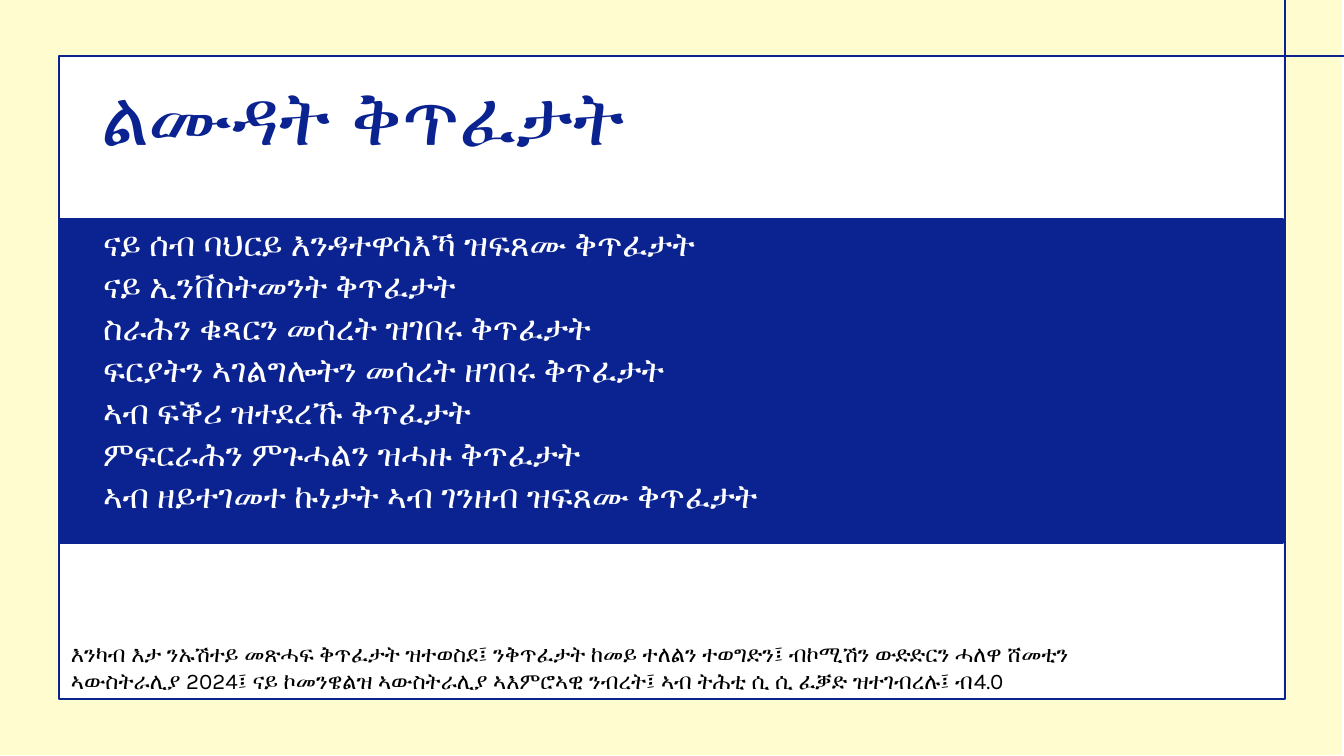
from lxml import etree
from pptx import Presentation
from pptx import util as u
from pptx.dml.color import RGBColor
from pptx.enum import shapes, text
from pptx.oxml.ns import qn

WIDE, HIGH = 1344, 756
SCALE = 12192000 / WIDE
FONT = "Karla"
HUES = {"navy": "0A2391", "cream": "FFFCCF", "white": "FFFFFF", "black": "000000"}
TITLE = "ልሙዳት ቅጥፈታት"
SCAMS = [
    ["ናይ ሰብ ባህርይ እንዳተዋሳእኻ ዝፍጸሙ ቅጥፈታት"],
    ["ናይ ኢንቨስትመንት ቅጥፈታት"],
    ["ስራሕን ቁጻርን መሰረት ዝገበሩ ቅጥፈታት"],
    ["ፍርያትን ኣገልግሎትን መሰረት ዘገበሩ ቅጥፈታት"],
    ["ኣብ ፍ", "ቕሪ ዝተደረኹ ቅጥፈታት"],
    ["ምፍርራሕን ምጉሓልን ዝሓዙ ቅጥፈታት"],
    ["ኣብ ዘይተገመተ ኩነታት ኣብ ገንዘብ ዝፍጸሙ ቅጥፈታት"],
]
SOURCE = (
    "እንካብ እታ ንኡሽተይ መጽሓፍ ቅጥፈታት ዝተወስደ፤ ንቅጥፈታት ከመይ ተለልን ተወግድን፤ "
    "ብኮሚሽን ውድድርን ሓለዋ ሸመቲን ኣውስትራሊያ 2024፤ ናይ ኮመንዌልዝ ኣውስትራሊያ "
    "ኣእምሮኣዊ ንብረት፤ ኣብ ትሕቲ ሲ ሲ ፈቓድ ዝተገብረሉ፤ ብ4.0"
)


def px(n):
    """Turn px into EMU."""
    return u.Emu(round(n * SCALE))


def hue(name):
    """Look up a colour by name."""
    return RGBColor.from_string(HUES[name])


def place(shape, box):
    """Move a shape to a box of left, top, width and height."""
    shape.left, shape.top, shape.width, shape.height = map(px, box)


def style(para, size, color, bold=False):
    """Set the font of a paragraph."""
    font = para.font
    font.name, font.size, font.bold = FONT, u.Pt(size), bold
    font.color.rgb = hue(color)


def frame(shape):
    """Prepare a text frame that wraps and starts at the top."""
    tf = shape.text_frame
    tf.word_wrap = True
    tf.auto_size = text.MSO_AUTO_SIZE.NONE
    tf.vertical_anchor = text.MSO_ANCHOR.TOP
    return tf


def rect(slide, box, fill=None, line=None):
    """Draw a plain rectangle."""
    shape = slide.shapes.add_shape(shapes.MSO_SHAPE.RECTANGLE, *map(px, box))
    shape.shadow.inherit = False
    if fill:
        shape.fill.solid()
        shape.fill.fore_color.rgb = hue(fill)
    else:
        shape.fill.background()
    if line:
        shape.line.color.rgb = hue(line)
        shape.line.width = u.Pt(1.5)
    else:
        shape.line.fill.background()


def head(slide, box):
    """Fill the title placeholder."""
    title = slide.shapes.title
    place(title, box)
    para = frame(title).paragraphs[0]
    para.text = TITLE
    para.alignment = text.PP_ALIGN.LEFT
    para.line_spacing = 0.9
    style(para, 54, "navy", True)


def note(slide, box):
    """Write the source note."""
    tf = frame(slide.shapes.add_textbox(*map(px, box)))
    tf.auto_size = text.MSO_AUTO_SIZE.SHAPE_TO_FIT_TEXT
    tf.text = SOURCE
    style(tf.paragraphs[0], 16, "black")


def border(slide, box):
    """Draw the cream margins, the frame and the corner lines around a box."""
    x, y, w, h = box
    side, shift = 59, -2
    for top in (0, y + h):
        rect(slide, (shift, top, WIDE, y), "cream")
    for left in (shift, x + w + shift):
        rect(slide, (left, y, side, h), "cream")
    rect(slide, (x + w, y - 70, 72, 70), line="navy")
    rect(slide, box, line="navy")


def panel(slide, box):
    """Draw the navy band and set the list of scams on it."""
    x, y, w, h = box
    rect(slide, box, "navy", "navy")
    body = slide.placeholders[1]
    slide.shapes._spTree.append(body._element)
    place(body, (x + 34, y + 10, w - 65, h - 29))
    tf = frame(body)
    for i, parts in enumerate(SCAMS):
        para = tf.add_paragraph() if i else tf.paragraphs[0]
        props = para._p.get_or_add_pPr()
        props.set("marL", "0")
        props.set("indent", "0")
        etree.SubElement(props, qn("a:buNone"))
        para.line_spacing = 0.7
        para.space_before = u.Pt(10 if i else 0)
        style(para, 23.8, "white")
        for part in parts:
            run = para.add_run()
            run.text = part
        if len(parts) > 1:
            run.font.name = "Calibri"


def main():
    """Build and save the slide."""
    deck = Presentation()
    deck.slide_width, deck.slide_height = px(WIDE), px(HIGH)
    slide = deck.slides.add_slide(deck.slide_layouts[1])
    head(slide, (91, 75, 1159, 143))
    note(slide, (61, 635, 1022, 64))
    border(slide, (59, 56, 1226, 643))
    panel(slide, (59, 219, 1224, 324))
    deck.save("out.pptx")


if __name__ == "__main__":
    main()
